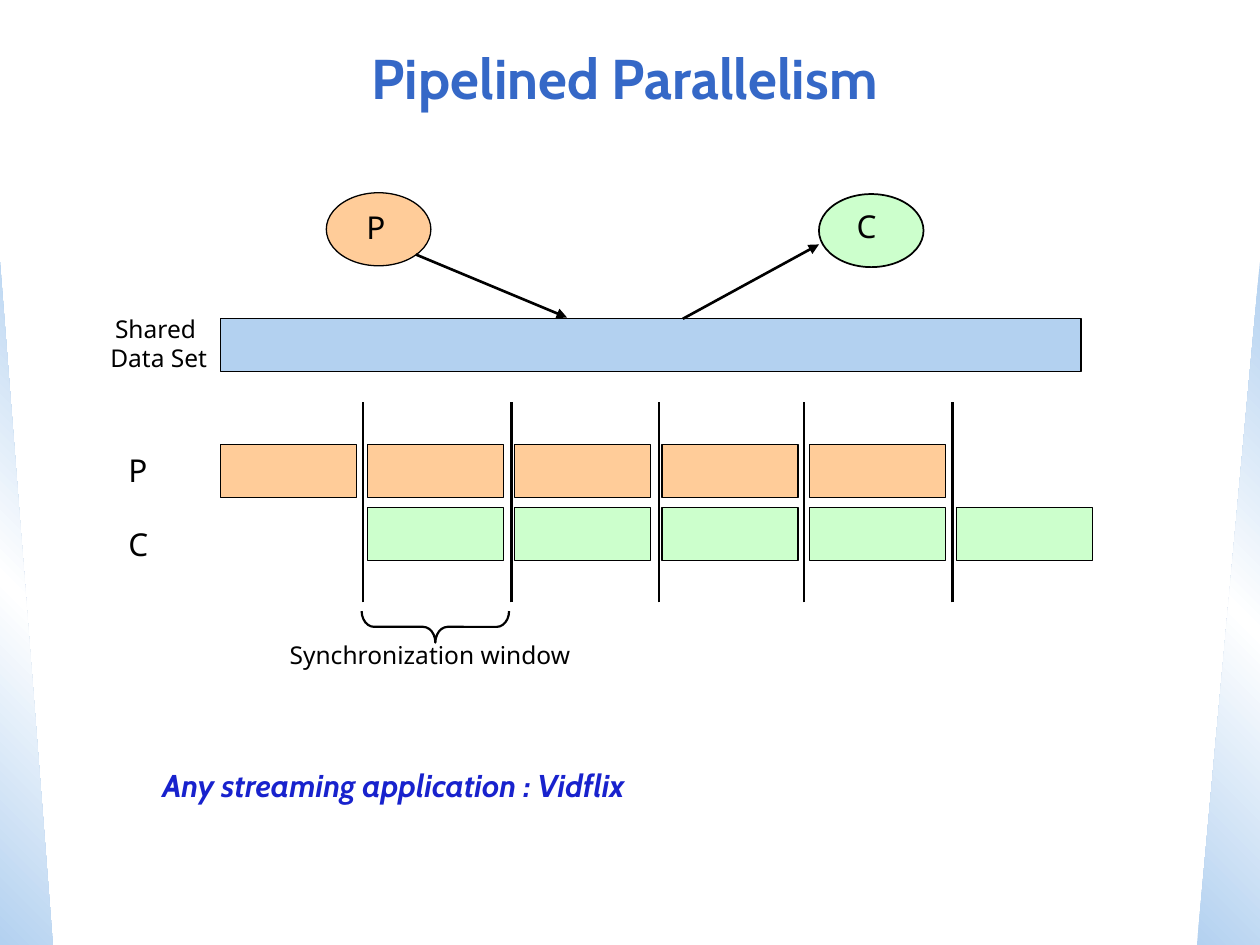
from copy import deepcopy

from lxml import etree
from pptx import Presentation
from pptx.dml.color import RGBColor
from pptx.enum.shapes import MSO_CONNECTOR, MSO_SHAPE
from pptx.enum.text import MSO_ANCHOR, MSO_AUTO_SIZE, PP_ALIGN
from pptx.oxml.ns import qn
from pptx.util import Inches, Pt

BLACK = RGBColor(0x00, 0x00, 0x00)
WHITE = RGBColor(0xFF, 0xFF, 0xFF)
SKY = RGBColor(0xB3, 0xD1, 0xF0)
ORANGE = RGBColor(0xFF, 0xCC, 0x99)
GREEN = RGBColor(0xCC, 0xFF, 0xCC)
TITLE_BLUE = RGBColor(0x35, 0x68, 0xC7)
NOTE_BLUE = RGBColor(0x18, 0x22, 0xCD)

RECTANGLE = MSO_SHAPE.RECTANGLE
ELLIPSE = MSO_SHAPE.OVAL
TRIANGLE = MSO_SHAPE.RIGHT_TRIANGLE
BRACE = MSO_SHAPE.RIGHT_BRACE
STRAIGHT = MSO_CONNECTOR.STRAIGHT
LEFT, CENTER = PP_ALIGN.LEFT, PP_ALIGN.CENTER

HEADING_FONT = "Cabin"
BODY_FONT = "Noto Sans"


class Painter:
    def __init__(self, page):
        self.page = page

    def shape(self, kind, left, top, width, height, fill=None, line=0.75):
        shape = self.page.shapes.add_shape(
            kind, Inches(left), Inches(top), Inches(width), Inches(height))
        shape.shadow.inherit = False
        if fill is None:
            shape.fill.background()
        else:
            shape.fill.solid()
            shape.fill.fore_color.rgb = fill
        if line:
            shape.line.color.rgb = BLACK
            shape.line.width = Pt(line)
        else:
            shape.line.fill.background()
        return shape

    def side_wedge(self, left, width, angle, flipped=False):
        """Edge triangle shaded from sky to white and back to sky."""
        wedge = self.shape(TRIANGLE, left, 2.08, width, 5.42, SKY, line=0)
        wedge.fill.gradient()
        wedge.fill.gradient_angle = angle
        for stop in wedge.fill.gradient_stops:
            stop.color.rgb = SKY
        stops = wedge._element.spPr.find(".//" + qn("a:gsLst"))
        stops.insert(1, deepcopy(stops[0]))
        for stop, position in zip(wedge.fill.gradient_stops, (0, 0.5, 1)):
            stop.position = position
        wedge.fill.gradient_stops[1].color.rgb = WHITE
        if flipped:
            wedge._element.spPr.find(qn("a:xfrm")).set("flipH", "1")

    def line(self, x1, y1, x2, y2, arrow=False):
        line = self.page.shapes.add_connector(
            STRAIGHT, Inches(x1), Inches(y1), Inches(x2), Inches(y2))
        line.line.color.rgb = BLACK
        line.line.width = Pt(1.5)
        if arrow:
            etree.SubElement(line.line._get_or_add_ln(), qn("a:tailEnd"), type="triangle")
        etree.SubElement(line._element.spPr, qn("a:effectLst"))

    def text(self, words, left, top, width, height, size=18, font=BODY_FONT,
             color=BLACK, bold=False, italic=False, align=LEFT, fit=True):
        """Text box with one paragraph a line; fit lets the box follow its text."""
        box = self.page.shapes.add_textbox(
            Inches(left), Inches(top), Inches(width), Inches(height))
        frame = box.text_frame
        frame.word_wrap = not fit
        if fit:
            frame.auto_size = MSO_AUTO_SIZE.SHAPE_TO_FIT_TEXT
        else:
            frame.vertical_anchor = MSO_ANCHOR.MIDDLE
        frame.text = words
        for para in frame.paragraphs:
            para.alignment = align
            para.font.size = Pt(size)
            para.font.name = font
            para.font.color.rgb = color
            para.font.bold = bold
            para.font.italic = italic


def main():
    deck = Presentation()
    deck.slide_width, deck.slide_height = Inches(10), Inches(7.5)
    painter = Painter(deck.slides.add_slide(deck.slide_layouts[6]))

    painter.side_wedge(0, 0.42, angle=45)
    painter.side_wedge(9.5, 0.5, angle=315, flipped=True)
    painter.text("Pipelined Parallelism", 0.25, 0.2, 9.42, 0.83, size=32,
                 font=HEADING_FONT, color=TITLE_BLUE, bold=True, align=CENTER, fit=False)

    # Shared data with its producer and consumer
    painter.shape(RECTANGLE, 1.75, 2.53, 6.83, 0.42, SKY)
    painter.text("Shared \nData Set", 0.77, 2.44, 0.98, 0.57, size=14, align=CENTER)
    painter.shape(ELLIPSE, 6.5, 1.54, 0.83, 0.58, GREEN, line=1)
    painter.text("C", 6.7, 1.59, 0.44, 0.5)
    painter.shape(ELLIPSE, 2.59, 1.53, 0.83, 0.58, ORANGE)
    painter.text("P", 2.81, 1.6, 0.42, 0.5)
    painter.line(5.42, 2.53, 6.5, 1.94, arrow=True)
    painter.line(3.3, 2.02, 4.5, 2.52, arrow=True)

    # Timeline: the consumer runs one step behind the producer
    first, step = 1.75, 1.168
    for start, top, color in ((0, 3.53, ORANGE), (1, 4.03, GREEN)):
        for slot in range(start, start + 5):
            painter.shape(RECTANGLE, first + slot * step, top, 1.08, 0.42, color)
    for x in (2.88, 4.06, 5.23, 6.38, 7.56):
        painter.line(x, 4.78, x, 3.19)
    painter.text("P", 0.92, 3.53, 0.42, 0.5)
    painter.text("C", 0.92, 4.12, 0.44, 0.5)

    brace = painter.shape(BRACE, 3.33, 4.39, 0.25, 1.17, line=1.25)
    brace.rotation = 90
    brace.adjustments[0] = 0.39
    painter.text("Synchronization window", 2.2, 5.03, 2.49, 0.33, size=14)
    painter.text("Any streaming application : Vidflix", 1.19, 6.03, 4.12, 0.4,
                 font=HEADING_FONT, color=NOTE_BLUE, bold=True, italic=True)

    deck.save("out.pptx")


if __name__ == "__main__":
    main()
